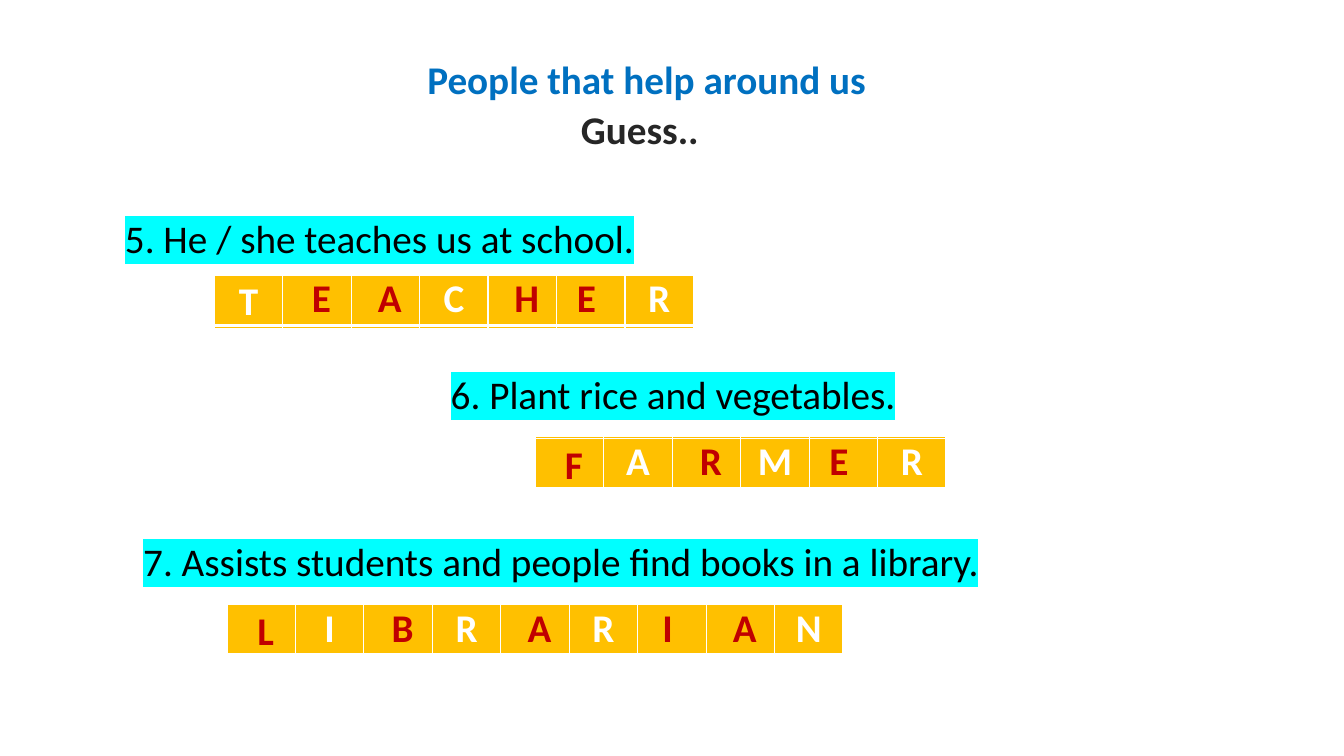
import lxml.etree
import pptx
import pptx.dml.color
import pptx.enum.text
import pptx.oxml.ns
import pptx.util

Cm = pptx.util.Cm
Pt = pptx.util.Pt
RGBColor = pptx.dml.color.RGBColor
qn = pptx.oxml.ns.qn

BLUE = RGBColor(0x00, 0x70, 0xC0)
CHARCOAL = RGBColor(0x26, 0x26, 0x26)
BLACK = RGBColor(0x00, 0x00, 0x00)
WHITE = RGBColor(0xFF, 0xFF, 0xFF)
RED = RGBColor(0xC0, 0x00, 0x00)
AMBER = RGBColor(0xFF, 0xC0, 0x00)
CYAN = RGBColor(0x00, 0xFF, 0xFF)

FONT = {"name": "Calibri", "size": Pt(28)}
LOOSE = {"line_spacing": 1.07, "space_after": Pt(8)}
CELL_MARGINS = {"margin_left": Cm(0.18), "margin_right": Cm(0.18),
                "margin_top": 0, "margin_bottom": 0}
BORDERS = {"lnL": Pt(1), "lnR": Pt(1), "lnT": Pt(1), "lnB": Pt(3)}
CELL_WIDTH, CELL_HEIGHT = Cm(1.725), Cm(1.22)
NBSP = chr(160)

# Clue, its box (left, top, width), its letters, their left, and the tops of
# the puzzle row and of the answer row laid over it, in cm.
# An underscore is a no-break space; letters that carry one are red.
RIDDLES = [
    ("5. He / she teaches us at school.", (2.9, 5.19, 13.84),
     "T _E _A C _H E_ R", 5.4, 7.04, 6.93),
    ("6. Plant rice and vegetables.", (11.11, 9.13, 12.07),
     "_F A _R M E_ R", 13.49, 11, 11.05),
    ("7. Assists students and people find books in a library.",
     (3.36, 13.34, 23.04), "_L I _B R _A R I_ _A N", 5.72, 15.2, 15.24),
]


def apply(target, values):
    for name, value in values.items():
        setattr(target, name, value)


def add_color(parent, color):
    lxml.etree.SubElement(parent, qn("a:srgbClr"), val=str(color))


def add_line(parent, tag, width):
    """Add a white line element and return it."""
    line = lxml.etree.SubElement(parent, qn("a:" + tag), w=str(int(width)))
    add_color(lxml.etree.SubElement(line, qn("a:solidFill")), WHITE)
    return line


def add_span(para, text, color, bold):
    """Add a run and return its properties element."""
    span = para.add_run()
    span.text = text
    apply(span.font, {**FONT, "bold": bold})
    span.font.color.rgb = color
    return span._r.rPr


def add_box(page, left, top, width, height):
    box = page.shapes.add_textbox(Cm(left), Cm(top), Cm(width), Cm(height))
    apply(box.text_frame, {
        "word_wrap": True,
        "auto_size": pptx.enum.text.MSO_AUTO_SIZE.SHAPE_TO_FIT_TEXT})
    return box.text_frame


def add_heading(page):
    frame = add_box(page, 10.52, 1.27, 12.17, 2.67)
    title = frame.paragraphs[0]
    prompt = frame.add_paragraph()
    apply(prompt, LOOSE)
    prompt._p.get_or_add_pPr().set("marL", str(int(Cm(3.87))))
    for para, text, color, outline in (
            (title, "People that help around us", BLUE, Pt(0.75)),
            (prompt, "Guess..", CHARCOAL, Pt(0.53))):
        props = add_span(para, text, color, True)
        props.insert(0, add_line(props, "ln", outline))


def add_clue(page, text, place):
    para = add_box(page, *place, 1.47).paragraphs[0]
    apply(para, LOOSE)
    props = add_span(para, text, BLACK, False)
    highlight = lxml.etree.SubElement(props, qn("a:highlight"))
    add_color(highlight, CYAN)
    props.find(qn("a:solidFill")).addnext(highlight)


def add_letters(page, letters, left, top, solved):
    """Add a row of letters; the red ones stay blank until it is solved."""
    letters = letters.split()
    table = page.shapes.add_table(
        1, len(letters), Cm(left), Cm(top),
        CELL_WIDTH * len(letters), CELL_HEIGHT).table
    apply(table, {"first_row": False, "horz_banding": False})
    for column, letter in enumerate(letters):
        table.columns[column].width = CELL_WIDTH
        cell = table.cell(0, column)
        apply(cell, CELL_MARGINS)
        for side, width in BORDERS.items():
            add_line(cell._tc.get_or_add_tcPr(), side, width)
        cell.fill.solid()
        cell.fill.fore_color.rgb = AMBER
        red = "_" in letter
        if red and not solved:
            continue
        para = cell.text_frame.paragraphs[0]
        para.alignment = pptx.enum.text.PP_ALIGN.CENTER
        if column == 0:
            para.line_spacing = 1.07
        add_span(para, letter.replace("_", NBSP), RED if red else WHITE, True)


def main():
    deck = pptx.Presentation()
    apply(deck, {"slide_width": Cm(33.87), "slide_height": Cm(19.05)})
    page = deck.slides.add_slide(deck.slide_layouts[6])

    # Heading
    add_heading(page)

    # Clues, each with its puzzle row under its answer row
    for clue, place, letters, left, puzzle_top, answer_top in RIDDLES:
        add_clue(page, clue, place)
        add_letters(page, letters, left, puzzle_top, solved=False)
        add_letters(page, letters, left, answer_top, solved=True)

    deck.save("out.pptx")


if __name__ == "__main__":
    main()
